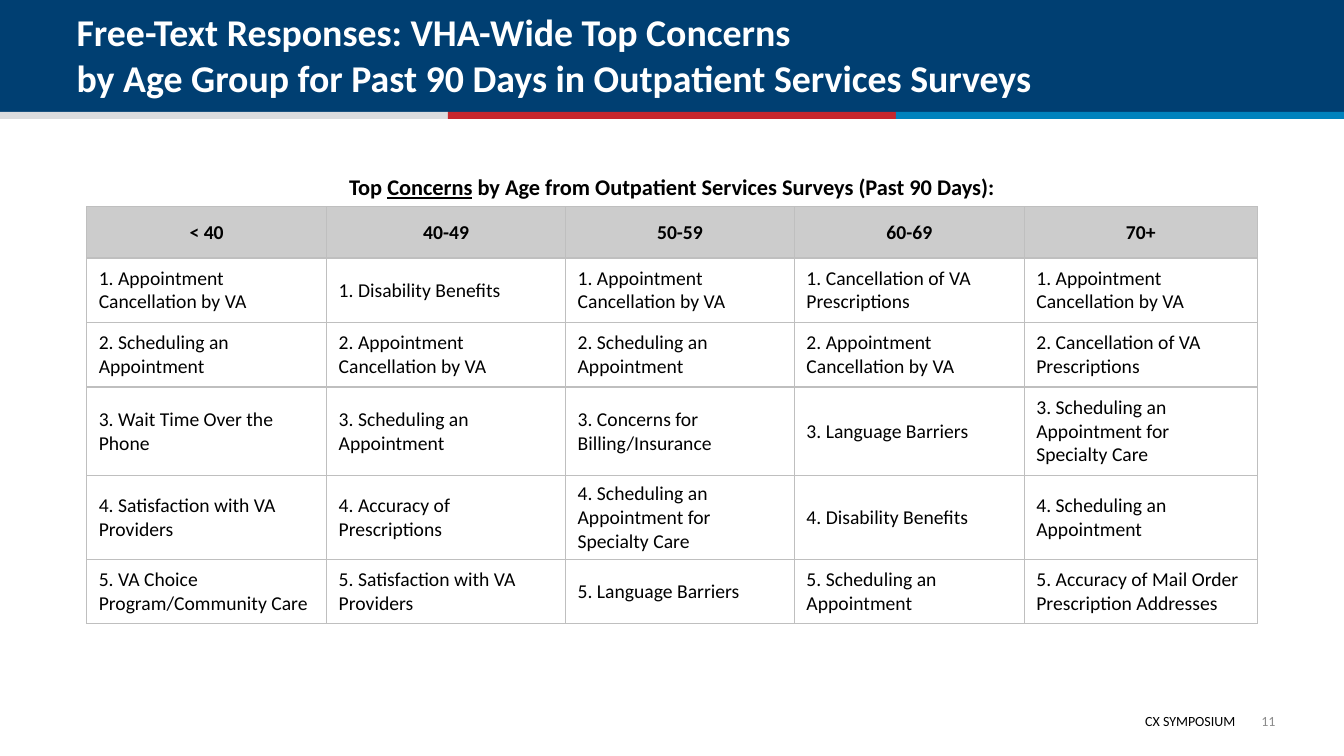
import pptx
import pptx.util
import pptx.dml.color
import pptx.enum.shapes
import pptx.enum.text
import pptx.oxml
import pptx.oxml.ns

RGBColor = pptx.dml.color.RGBColor
Inches = pptx.util.Inches
Pt = pptx.util.Pt
ALIGN = pptx.enum.text.PP_ALIGN
ANCHOR = pptx.enum.text.MSO_ANCHOR

NAVY = RGBColor(0x00, 0x3F, 0x72)
SILVER = RGBColor(0xDB, 0xDC, 0xDE)
RED = RGBColor(0xC6, 0x26, 0x2D)
BLUE = RGBColor(0x00, 0x82, 0xBD)
WHITE = RGBColor(0xFF, 0xFF, 0xFF)
BLACK = RGBColor(0x00, 0x00, 0x00)
HEAD_GRAY = RGBColor(0xCC, 0xCC, 0xCC)
BORDER_GRAY = RGBColor(0xBF, 0xBF, 0xBF)
NUMBER_GRAY = RGBColor(0x8C, 0x8C, 0x8C)

WIDTH, HEIGHT = 13.33, 7.5
FONT = "Calibri"
COL_WIDTHS = [2.38, 2.37, 2.27, 2.28, 2.31]
ROW_HEIGHTS = [0.51, 0.64, 0.64, 0.88, 0.79, 0.64]
CANCEL = "Appointment Cancellation by VA"
PRESCRIPTIONS = "Cancellation of VA Prescriptions"
SCHEDULING = "Scheduling an Appointment"
SPECIALTY = "Scheduling an Appointment for Specialty Care"
LANGUAGE = "Language Barriers"
DISABILITY = "Disability Benefits"
PROVIDERS = "Satisfaction with VA Providers"
CONCERNS = {
    "< 40": [CANCEL, SCHEDULING, "Wait Time Over the Phone", PROVIDERS,
             "VA Choice Program/Community Care"],
    "40-49": [DISABILITY, CANCEL, SCHEDULING, "Accuracy of Prescriptions", PROVIDERS],
    "50-59": [CANCEL, SCHEDULING, "Concerns for Billing/Insurance", SPECIALTY, LANGUAGE],
    "60-69": [PRESCRIPTIONS, CANCEL, LANGUAGE, DISABILITY, SCHEDULING],
    "70+": [CANCEL, PRESCRIPTIONS, SPECIALTY, SCHEDULING,
            "Accuracy of Mail Order Prescription Addresses"],
}


def style(p, size, color, bold=False, align=ALIGN.LEFT):
    p.alignment = align
    p.font.name = FONT
    p.font.size = Pt(size)
    p.font.bold = bold
    p.font.color.rgb = color


def add_bar(s, x, y, w, h, color):
    bar = s.shapes.add_shape(pptx.enum.shapes.MSO_SHAPE.RECTANGLE,
                             Inches(x), Inches(y), Inches(w), Inches(h))
    bar.shadow.inherit = False
    bar.fill.solid()
    bar.fill.fore_color.rgb = color
    bar.line.fill.background()


def add_text(s, x, y, w, h, text=""):
    tf = s.shapes.add_textbox(Inches(x), Inches(y), Inches(w), Inches(h)).text_frame
    tf.word_wrap = True
    tf.text = text
    return tf


def add_header(s, x, y, w, h):
    add_bar(s, x, y, w, h, NAVY)
    for i, color in enumerate([SILVER, RED, BLUE]):
        add_bar(s, x + i * w / 3, y + h - 0.03, w / 3, 0.07, color)
    title = s.shapes.title
    title.left, title.top = Inches(x + 0.66), Inches(y + 0.15)
    title.width, title.height = Inches(12), Inches(0.89)
    tf = title.text_frame
    tf.auto_size = pptx.enum.text.MSO_AUTO_SIZE.NONE
    tf.vertical_anchor = ANCHOR.BOTTOM
    tf.text = ("Free-Text Responses: VHA-Wide Top Concerns \v"
               "by Age Group for Past 90 Days in Outpatient Services Surveys")
    style(tf.paragraphs[0], 27, WHITE, True)
    title.element.getparent().append(title.element)


def add_caption(s, x, y, w, h):
    p = add_text(s, x, y, w, h).paragraphs[0]
    for text, underline in [("Top ", False), ("Concerns", True),
                            (" by Age from Outpatient Services Surveys (Past 90 Days):", False)]:
        r = p.add_run()
        r.text = text
        r.font.underline = underline
    style(p, 16, BLACK, True, ALIGN.CENTER)


def add_borders(cell):
    tcPr = cell._tc.get_or_add_tcPr()
    for i, side in enumerate(["lnL", "lnR", "lnT", "lnB"]):
        tcPr.insert(i, pptx.oxml.parse_xml(
            f'<a:{side} {pptx.oxml.ns.nsdecls("a")} w="{Pt(1)}"><a:solidFill>'
            f'<a:srgbClr val="{BORDER_GRAY}"/></a:solidFill></a:{side}>'))


def fill_cell(cell, text, is_head):
    cell.text = text
    cell.vertical_anchor = ANCHOR.MIDDLE
    cell.margin_left = cell.margin_right = Inches(0.12)
    cell.margin_top = cell.margin_bottom = Inches(0.06)
    cell.fill.solid()
    cell.fill.fore_color.rgb = HEAD_GRAY if is_head else WHITE
    style(cell.text_frame.paragraphs[0], 14, BLACK, is_head,
          ALIGN.CENTER if is_head else ALIGN.LEFT)
    add_borders(cell)


def add_concerns_table(s, x, y):
    table = s.shapes.add_table(len(ROW_HEIGHTS), len(COL_WIDTHS), Inches(x), Inches(y),
                               Inches(sum(COL_WIDTHS)), Inches(sum(ROW_HEIGHTS))).table
    table.horz_banding = False
    for row, h in zip(table.rows, ROW_HEIGHTS):
        row.height = Inches(h)
    for c, (age, concerns) in enumerate(CONCERNS.items()):
        table.columns[c].width = Inches(COL_WIDTHS[c])
        fill_cell(table.cell(0, c), age, True)
        for rank, concern in enumerate(concerns, 1):
            fill_cell(table.cell(rank, c), f"{rank}. {concern}", False)


def add_footer(s, right, y):
    tf = add_text(s, right - 7.14, y + 0.07, 6.84, 0.27, "CX SYMPOSIUM")
    style(tf.paragraphs[0], 10, BLACK, align=ALIGN.RIGHT)
    tf = add_text(s, right - 0.36, y, 0.36, 0.4, "11")
    tf.margin_left = tf.margin_right = tf.margin_top = tf.margin_bottom = 0
    tf.vertical_anchor = ANCHOR.MIDDLE
    style(tf.paragraphs[0], 10, NUMBER_GRAY, align=ALIGN.RIGHT)


def main():
    prs = pptx.Presentation()
    prs.slide_width, prs.slide_height = Inches(WIDTH), Inches(HEIGHT)
    s = prs.slides.add_slide(prs.slide_layouts[5])
    add_header(s, 0, 0, WIDTH, 1.14)
    add_concerns_table(s, 0.86, 2.05)
    add_caption(s, 3.01, 1.67, 7.31, 0.37)
    add_footer(s, 12.65, 6.95)
    prs.save("out.pptx")


if __name__ == "__main__":
    main()
